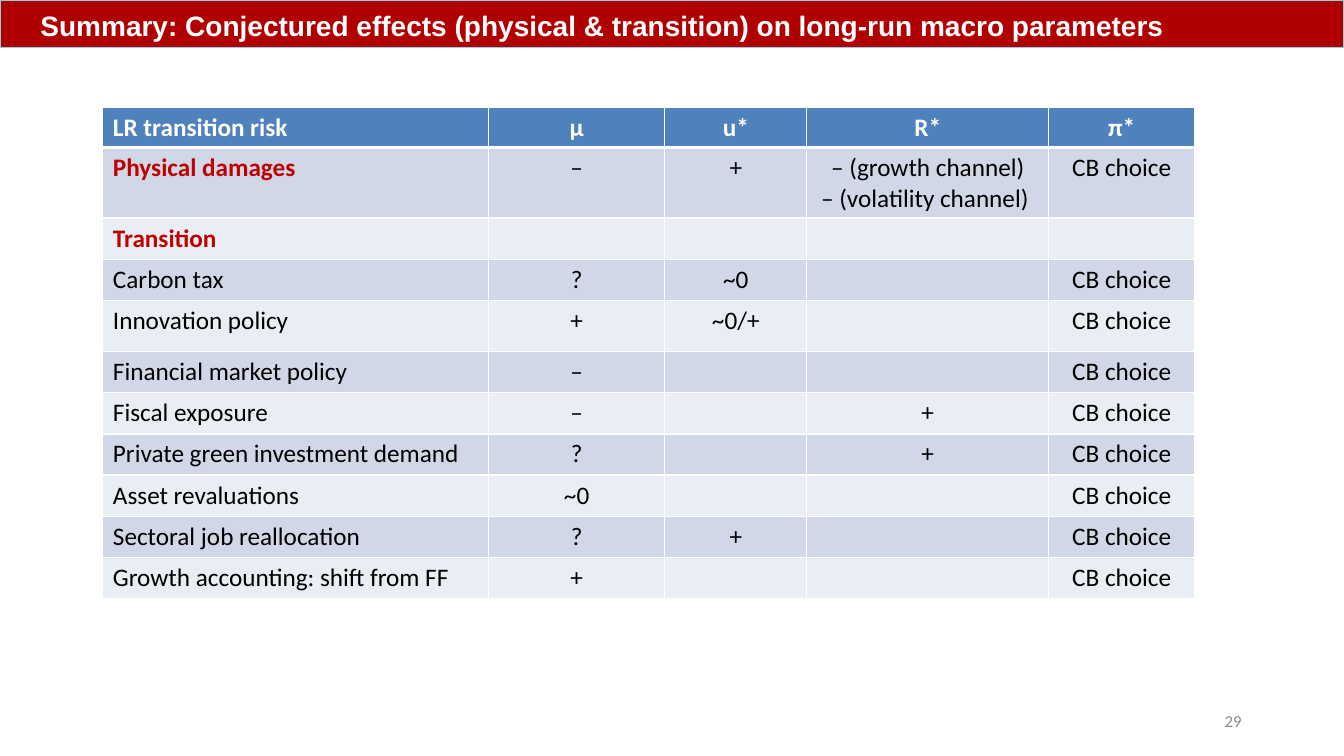
from dataclasses import dataclass

from lxml import etree
from pptx import Presentation, util as u
from pptx.dml.color import RGBColor
from pptx.enum import text
from pptx.oxml import ns

COLS, ROWS = 160, 90
LEFT, MID, RIGHT = text.PP_ALIGN.LEFT, text.PP_ALIGN.CENTER, text.PP_ALIGN.RIGHT


@dataclass(frozen=True)
class Theme:
    """Hold the colours, fonts and type sizes."""
    bar: str = "B00000"
    edge: str = "93CDDD"
    head: str = "4F81BD"
    odd: str = "D0D8E8"
    even: str = "E9EDF4"
    key: str = "C00000"
    ink: str = "000000"
    pale: str = "FFFFFF"
    grey: str = "8C8C8C"
    sans: str = "Arial"
    body: str = "Calibri"
    big: int = 20
    mid: int = 18
    small: int = 12


T = Theme()
TITLE = "Summary: Conjectured effects (physical & transition) on long-run macro parameters"
BANK = "CB choice"
HEADS = ["LR transition risk", "μ", "u*", "R*", "π*"]
RISKS = [
    ["Physical damages", "–", "+", "– (growth channel)\n– (volatility channel) ", BANK],
    ["Transition", "", "", "", ""],
    ["Carbon tax", "?", "~0", "", BANK],
    ["Innovation policy", "+", "~0/+", "", BANK],
    ["Financial market policy", "–", "", "", BANK],
    ["Fiscal exposure", "–", "", "+", BANK],
    ["Private green investment demand", "?", "", "+", BANK],
    ["Asset revaluations", "~0", "", "", BANK],
    ["Sectoral job reallocation", "?", "+", "", BANK],
    ["Growth accounting: shift from FF", "+", "", "", BANK],
]
KEYS = {"Physical damages", "Transition"}
WIDE = [45.9, 21, 16.9, 28.8, 17.4]
TALL = [4.6, 8.4, 4.9, 4.9, 6.1] + [4.9] * 6


def rgb(tone):
    """Turn a hex string into a colour."""
    return RGBColor.from_string(tone)


def write(frame, words, size=T.mid, font=T.body, tone=T.ink, bold=False, align=LEFT):
    """Write each line of the words as a formatted paragraph."""
    for i, line in enumerate(words.split("\n")):
        para = frame.add_paragraph() if i else frame.paragraphs[0]
        para.alignment = align
        run = para.add_run()
        run.text = line
        run.font.size, run.font.name, run.font.bold = u.Pt(size), font, bold
        run.font.color.rgb = rgb(tone)


def rule(cell, base=1):
    """Draw pale borders around a cell, with the bottom one of a given width."""
    props = cell._tc.get_or_add_tcPr()
    for side, pts in zip("LRTB", (1, 1, 1, base)):
        line = etree.SubElement(props, ns.qn(f"a:ln{side}"), w=str(u.Pt(pts)))
        fill = etree.SubElement(line, ns.qn("a:solidFill"))
        etree.SubElement(fill, ns.qn("a:srgbClr"), val=T.pale)


def banner(slide, box):
    """Place the title as a full-width red bar."""
    bar = slide.shapes.title
    bar.left, bar.top, bar.width, bar.height = box
    bar.fill.solid()
    bar.fill.fore_color.rgb = rgb(T.bar)
    bar.line.color.rgb = rgb(T.edge)
    bar.line.width = u.Pt(0)
    frame = bar.text_frame
    frame.auto_size, frame.word_wrap = text.MSO_AUTO_SIZE.NONE, True
    frame.vertical_anchor = text.MSO_ANCHOR.BOTTOM
    frame.margin_left = int(box[2] * 0.03)
    write(frame, TITLE, size=T.big, font=T.sans, tone=T.pale, bold=True)


def matrix(slide, box, unit):
    """Place the table of effects."""
    grid = slide.shapes.add_table(len(TALL), len(WIDE), *box).table
    for col, wide in zip(grid.columns, WIDE):
        col.width = int(wide * unit[0])
    for row, tall in zip(grid.rows, TALL):
        row.height = int(tall * unit[1])
    for r, line in enumerate([HEADS] + RISKS):
        top = r == 0
        for c, words in enumerate(line):
            cell = grid.cell(r, c)
            rule(cell, base=3 if top else 1)
            cell.fill.solid()
            cell.fill.fore_color.rgb = rgb(T.head if top else T.odd if r % 2 else T.even)
            key = words in KEYS
            if words:
                write(cell.text_frame, words, bold=top or key,
                      tone=T.pale if top else T.key if key else T.ink,
                      align=MID if c else LEFT)


def number(slide, box):
    """Place the page number."""
    frame = slide.shapes.add_textbox(*box).text_frame
    frame.word_wrap = True
    frame.vertical_anchor = text.MSO_ANCHOR.MIDDLE
    write(frame, "29", size=T.small, tone=T.grey, align=RIGHT)


def main():
    """Build and save the slide."""
    deck = Presentation()
    deck.slide_width, deck.slide_height = u.Inches(13.33), u.Inches(7.5)
    unit = deck.slide_width / COLS, deck.slide_height / ROWS

    def area(x, y, w, h):
        """Turn grid columns and rows into lengths."""
        return [int(n * unit[i % 2]) for i, n in enumerate((x, y, w, h))]

    slide = deck.slides.add_slide(deck.slide_layouts[5])
    banner(slide, area(0, 0, COLS, 5.65))
    number(slide, area(113, 83.4, 36, 4.8))
    matrix(slide, area(12.25, 12.75, sum(WIDE), sum(TALL)), unit)
    deck.save("out.pptx")


if __name__ == "__main__":
    main()
